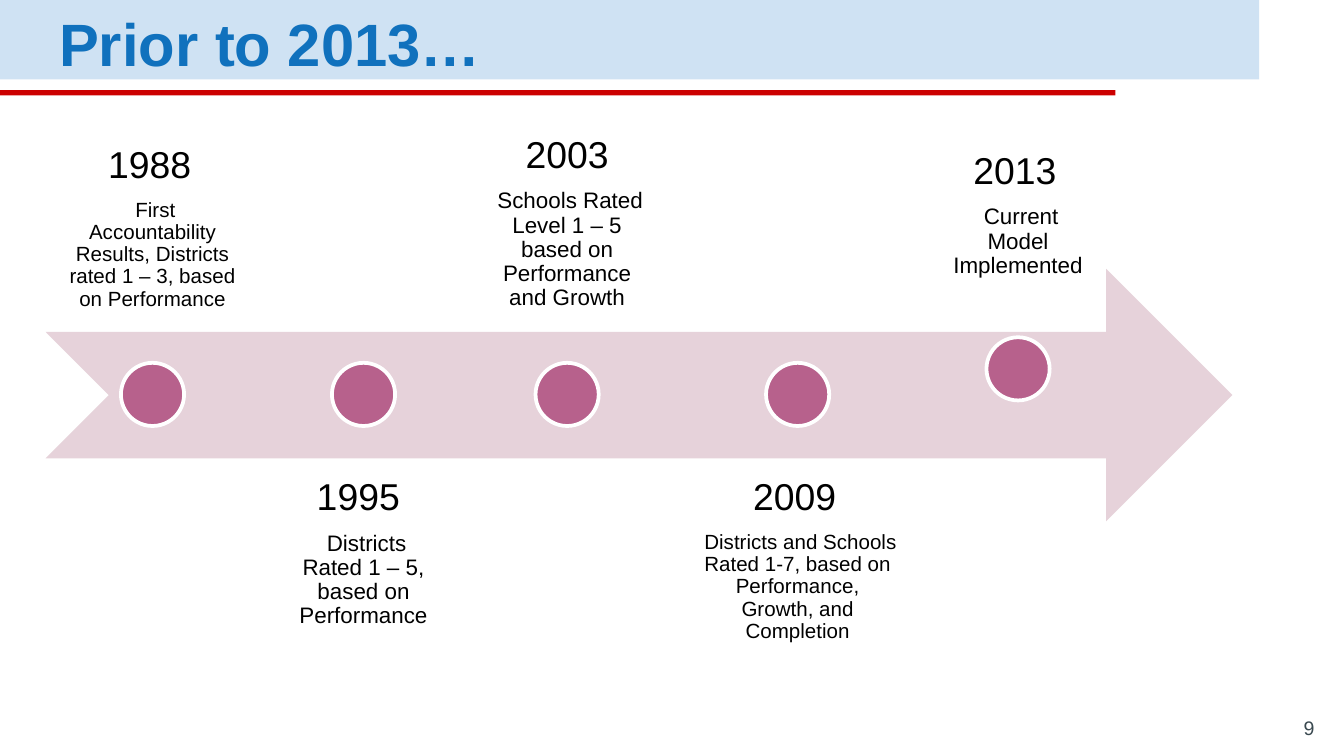
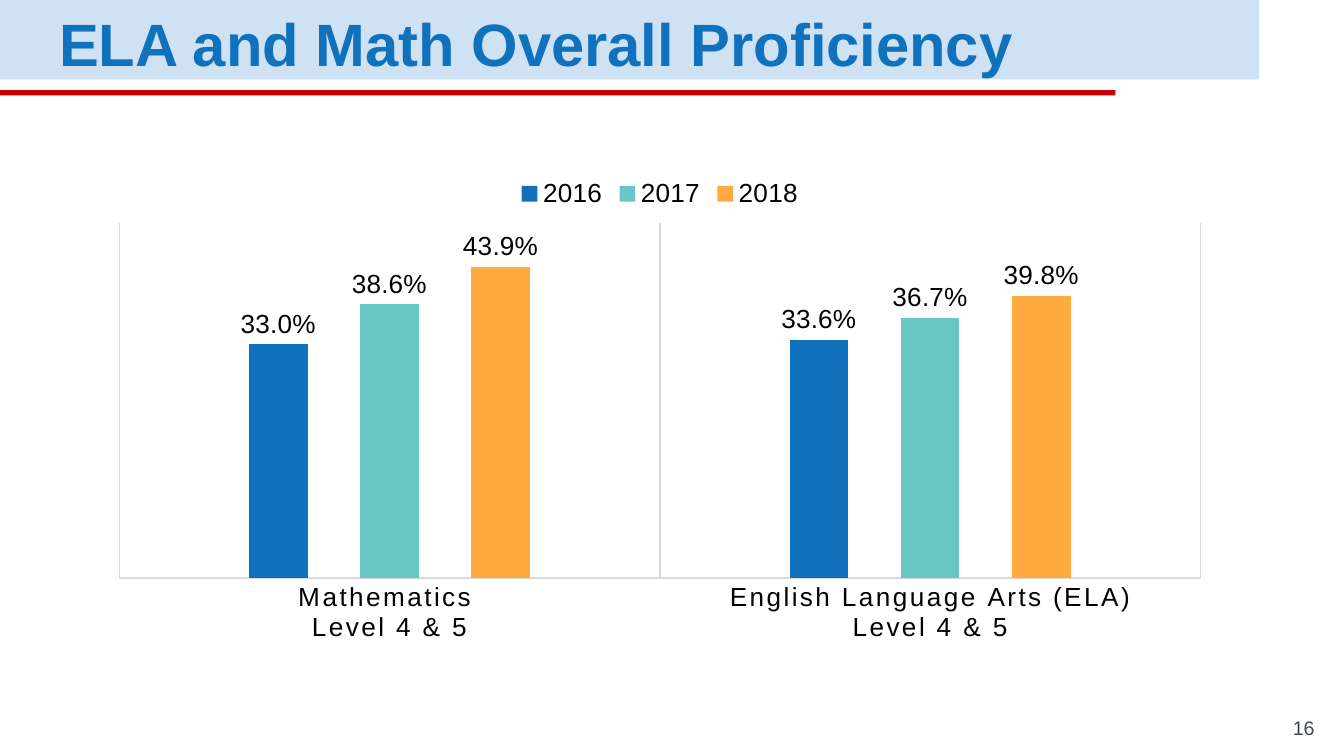
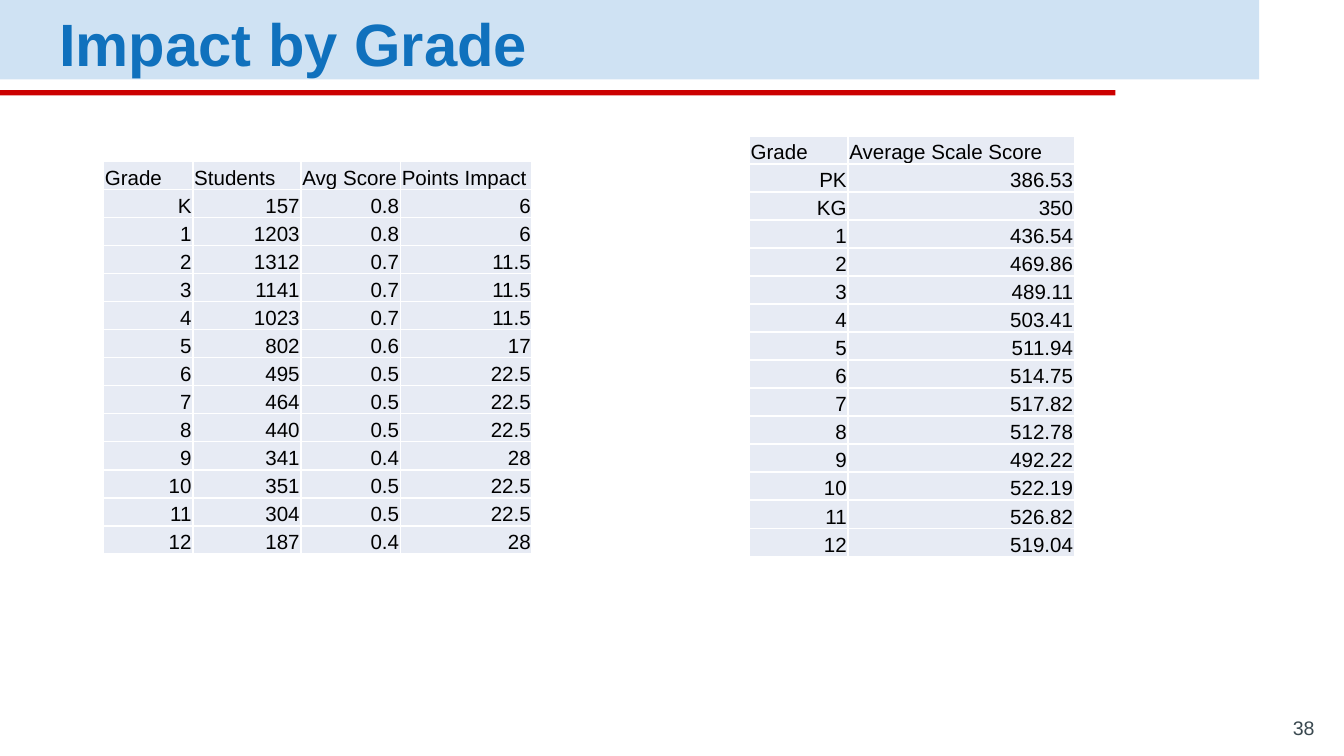
from dataclasses import dataclass

from lxml.etree import SubElement
from pptx import Presentation
from pptx.chart.data import CategoryChartData
from pptx.dml.color import RGBColor
from pptx.enum.chart import XL_CHART_TYPE as ChartType
from pptx.enum.chart import XL_LABEL_POSITION as LabelPosition
from pptx.enum.chart import XL_LEGEND_POSITION as LegendPosition
from pptx.enum.chart import XL_TICK_MARK as TickMark
from pptx.enum.shapes import MSO_SHAPE as Shape
from pptx.enum.text import MSO_ANCHOR as Anchor
from pptx.enum.text import MSO_AUTO_SIZE as AutoSize
from pptx.enum.text import PP_ALIGN as Align
from pptx.oxml.ns import qn
from pptx.util import Inches, Pt

SLIDE_WIDTH = Inches(10)
SLIDE_HEIGHT = SLIDE_WIDTH * 9 // 16
UNIT = SLIDE_WIDTH // 100  # one grid column, and one grid row

BLACK = RGBColor(0x00, 0x00, 0x00)
WHITE = RGBColor(0xFF, 0xFF, 0xFF)
BLUE = RGBColor(0x10, 0x71, 0xBD)
PALE_BLUE = RGBColor(0xCF, 0xE2, 0xF3)
RED = RGBColor(0xCC, 0x00, 0x00)
SLATE = RGBColor(0x3A, 0x49, 0x50)
PINK = RGBColor(0xE6, 0xD2, 0xDA)
PLUM = RGBColor(0xB7, 0x61, 0x8C)
TEAL = RGBColor(0x68, 0xC7, 0xC3)
ORANGE = RGBColor(0xFF, 0xAB, 0x40)
GREY = RGBColor(0xD9, 0xD9, 0xD9)
CELL_BLUE = RGBColor(0xE7, 0xEB, 0xF4)

FONT = "Arial"
MARGINS = ("margin_left", "margin_top", "margin_right", "margin_bottom")


@dataclass
class Box:
    """A region of the slide, measured in grid columns and rows."""
    left: float
    top: float
    width: float
    height: float

    def inside(self, left, top, width, height):
        return Box(self.left + left, self.top + top, width, height)

    def emu(self):
        return [round(side * UNIT)
                for side in (self.left, self.top, self.width, self.height)]


@dataclass
class Stop:
    """One year on the timeline; left and tops are relative to its box."""
    year: str
    event: str
    left: float
    width: float
    event_size: int
    space_size: int = 0  # size of the space that follows the year, if any
    top: float = 0
    height: float = 18.8
    dot_top: float = 21.1


BAND = Box(0, 0, 93.7, 5.9)
RULE = Box(0, 6.7, 83, 0.4)
TITLE = Box(3.4, 0.3, 90.3, 4.9)
PAGE_NUMBER = Box(92.8, 53.4, 6, 2.6)

BELOW = 28.1
STOPS = [
    Stop("1988", "First Accountability Results, Districts rated 1 – 3, "
         "based on Performance", 0, 15.9, 11, space_size=11),
    Stop("1995", "Districts Rated 1 – 5, based on Performance",
         16.5, 14.3, 12, space_size=20, top=BELOW),
    Stop("2003", "Schools Rated Level 1 – 5 based on Performance and Growth",
         31.3, 15, 12),
    Stop("2009", "Districts and Schools Rated 1-7, based on Performance, "
         "Growth, and Completion", 46.9, 18.1, 11, space_size=11, top=BELOW),
    Stop("2013", "Current Model Implemented", 65.4, 13.9, 12, space_size=12,
         top=5.1, height=11.3, dot_top=19.2),
]

SUBJECTS = ["Mathematics \nLevel 4 & 5",
            "English Language Arts (ELA)\nLevel 4 & 5"]
PROFICIENCY = [
    ("2016", (0.33, 0.336), BLUE),
    ("2017", (0.386, 0.367), TEAL),
    ("2018", (0.439, 0.398), ORANGE),
]

IMPACT = [
    ("Grade", "Students", "Avg Score", "Points Impact"),
    ("K", "157", "0.8", "6"),
    ("1", "1203", "0.8", "6"),
    ("2", "1312", "0.7", "11.5"),
    ("3", "1141", "0.7", "11.5"),
    ("4", "1023", "0.7", "11.5"),
    ("5", "802", "0.6", "17"),
    ("6", "495", "0.5", "22.5"),
    ("7", "464", "0.5", "22.5"),
    ("8", "440", "0.5", "22.5"),
    ("9", "341", "0.4", "28"),
    ("10", "351", "0.5", "22.5"),
    ("11", "304", "0.5", "22.5"),
    ("12", "187", "0.4", "28"),
]
SCALE_SCORES = [
    ("Grade", "Average Scale Score"),
    ("PK", "386.53"),
    ("KG", "350"),
    ("1", "436.54"),
    ("2", "469.86"),
    ("3", "489.11"),
    ("4", "503.41"),
    ("5", "511.94"),
    ("6", "514.75"),
    ("7", "517.82"),
    ("8", "512.78"),
    ("9", "492.22"),
    ("10", "522.19"),
    ("11", "526.82"),
    ("12", "519.04"),
]


def apply(target, **formats):
    for attribute, value in formats.items():
        setattr(target, attribute, value)


def style_font(font, size, color=BLACK, **formats):
    apply(font, name=FONT, size=Pt(size), **formats)
    font.color.rgb = color


def style_frame(frame, anchor, inset):
    apply(frame, word_wrap=True, auto_size=AutoSize.NONE,
          vertical_anchor=anchor, **dict.fromkeys(MARGINS, Inches(inset)))


def add_filled(slide, preset, box, color):
    shape = slide.shapes.add_shape(preset, *box.emu())
    shape.shadow.inherit = False
    shape.fill.solid()
    shape.fill.fore_color.rgb = color
    shape.line.fill.background()
    return shape


def add_text(slide, box, anchor, inset):
    frame = slide.shapes.add_textbox(*box.emu()).text_frame
    style_frame(frame, anchor, inset)
    return frame


def write(paragraph, text, size, color=BLACK, bold=False, **formats):
    apply(paragraph, **formats)
    run = paragraph.add_run()
    run.text = text
    style_font(run.font, size, color, bold=bold)


def put_bands_on_layout(slide):
    """Draw the title bands and hand them to the layout all slides share."""
    layout_title = slide.slide_layout.placeholders[0].element
    for box, color in ((BAND, PALE_BLUE), (RULE, RED)):
        band = add_filled(slide, Shape.RECTANGLE, box, color)
        layout_title.addprevious(band.element)


def add_titled_slide(deck, title, page):
    slide = deck.slides.add_slide(deck.slide_layouts[5])
    heading = slide.shapes.title
    apply(heading, **dict(zip(("left", "top", "width", "height"), TITLE.emu())))
    style_frame(heading.text_frame, Anchor.MIDDLE, 0.1)
    write(heading.text_frame.paragraphs[0], title, 32, BLUE, bold=True,
          alignment=Align.LEFT, line_spacing=1.15, space_after=Pt(16))
    number = add_text(slide, PAGE_NUMBER, Anchor.BOTTOM, 0.1)
    write(number.paragraphs[0], page, 10.5, SLATE, alignment=Align.RIGHT)
    return slide


def add_timeline(slide, box):
    add_filled(slide, Shape.NOTCHED_RIGHT_ARROW,
               box.inside(0, 14.1, box.width, 18.8), PINK)
    for stop in STOPS:
        add_stop(slide, box, stop)


def add_stop(slide, box, stop):
    anchor = Anchor.TOP if stop.top == BELOW else Anchor.BOTTOM
    label = add_text(
        slide, box.inside(stop.left, stop.top, stop.width, stop.height),
        anchor, 0.16)
    centred = dict(alignment=Align.CENTER, line_spacing=0.9)
    year = label.paragraphs[0]
    write(year, stop.year, 20, space_after=Pt(7), **centred)
    if stop.space_size:
        write(year, " ", stop.space_size)
    write(label.add_paragraph(), f" {stop.event}", stop.event_size, **centred)

    size = 4.7
    dot_left = stop.left + (stop.width - size) / 2
    dot = add_filled(slide, Shape.OVAL,
                     box.inside(dot_left, stop.dot_top, size, size), PLUM)
    dot.line.color.rgb = WHITE
    dot.line.width = Pt(2)


def add_proficiency_chart(slide, box):
    data = CategoryChartData(number_format="0.0%")
    data.categories = SUBJECTS
    for year, shares, _ in PROFICIENCY:
        data.add_series(year, shares)
    chart = slide.shapes.add_chart(
        ChartType.COLUMN_CLUSTERED, *box.emu(), data).chart
    apply(chart, has_title=False, has_legend=True)
    style_font(chart.font, 14)
    apply(chart.legend, position=LegendPosition.TOP, include_in_layout=False)
    style_font(chart.legend.font, 14)

    plot = chart.plots[0]
    apply(plot, gap_width=444, overlap=-90, vary_by_categories=False)
    for series, (_, _, color) in zip(plot.series, PROFICIENCY):
        series.format.fill.solid()
        series.format.fill.fore_color.rgb = color
        labels = series.data_labels
        apply(labels, show_value=True, position=LabelPosition.OUTSIDE_END,
              number_format="0.0%", number_format_is_linked=False)
        style_font(labels.font, 14)

    apply(chart.value_axis, visible=False, has_major_gridlines=False,
          minimum_scale=0, maximum_scale=0.5)
    apply(chart.value_axis.tick_labels, number_format="0.0%",
          number_format_is_linked=False)
    subjects = chart.category_axis
    apply(subjects, has_major_gridlines=True,
          major_tick_mark=TickMark.NONE, minor_tick_mark=TickMark.NONE)
    for line in (subjects.format.line, subjects.major_gridlines.format.line):
        line.color.rgb = GREY
        line.width = Pt(0.75)
    style_font(subjects.tick_labels.font, 14)
    for letters in chart.element.xpath(".//c:catAx/c:txPr//a:defRPr"):
        letters.set("spc", "120")


def add_cell_borders(cell):
    properties = cell._tc.get_or_add_tcPr()
    for position, side in enumerate(("lnL", "lnR", "lnT", "lnB")):
        line = SubElement(properties, qn(f"a:{side}"), w=str(Pt(1)))
        fill = SubElement(line, qn("a:solidFill"))
        SubElement(fill, qn("a:srgbClr"), val=str(WHITE))
        properties.insert(position, line)


def add_score_table(slide, left, top, column_widths, rows):
    row_height = 2.09
    box = Box(left, top, sum(column_widths), row_height * len(rows))
    table = slide.shapes.add_table(
        len(rows), len(column_widths), *box.emu()).table
    apply(table, first_row=False, horz_banding=False)
    for column, width in zip(table.columns, column_widths):
        column.width = round(width * UNIT)
    for row_index, row in enumerate(rows):
        table.rows[row_index].height = round(row_height * UNIT)
        alignment = Align.RIGHT if row_index else Align.LEFT
        for column_index, value in enumerate(row):
            cell = table.cell(row_index, column_index)
            apply(cell, vertical_anchor=Anchor.BOTTOM,
                  **dict.fromkeys(MARGINS, Inches(0.01)))
            cell.margin_bottom = 0
            cell.fill.solid()
            cell.fill.fore_color.rgb = CELL_BLUE
            add_cell_borders(cell)
            write(cell.text_frame.paragraphs[0], value, 11,
                  alignment=alignment)


def main():
    deck = Presentation()
    apply(deck, slide_width=SLIDE_WIDTH, slide_height=SLIDE_HEIGHT)

    history = add_titled_slide(deck, "Prior to 2013…", "9")
    put_bands_on_layout(history)
    add_timeline(history, Box(3.4, 5.9, 88.3, 46.9))

    proficiency = add_titled_slide(
        deck, "ELA and Math Overall Proficiency", "16")
    add_proficiency_chart(proficiency, Box(7.2, 12.2, 83.8, 36.3))

    impact = add_titled_slide(deck, "Impact by Grade", "38")
    add_score_table(impact, 7.7, 12, (6.65, 8.05, 7.4, 9.8), IMPACT)
    add_score_table(impact, 55.75, 10.1, (7.35, 16.85), SCALE_SCORES)

    deck.save("out.pptx")


if __name__ == "__main__":
    main()
